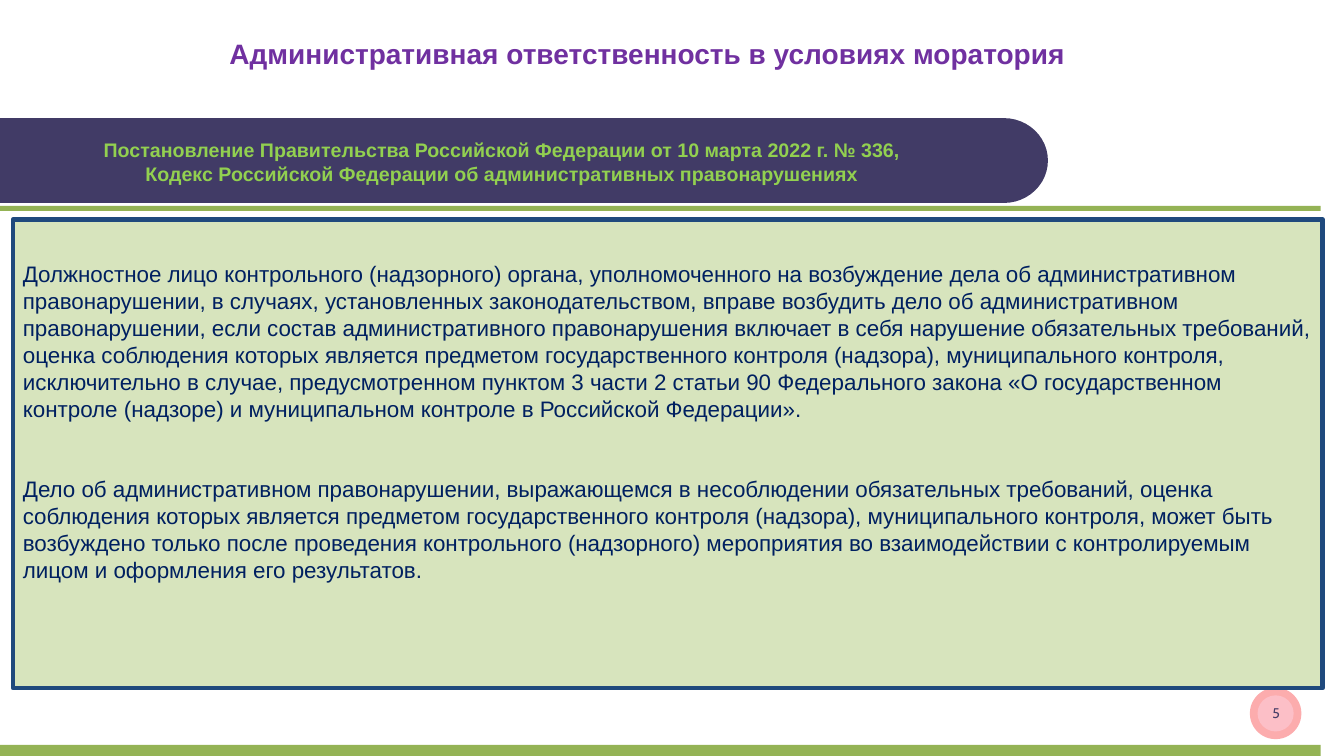
import pptx
import pptx.util
import pptx.dml.color
import pptx.enum.shapes
import pptx.enum.text

Pt = pptx.util.Pt
SHAPES = pptx.enum.shapes.MSO_SHAPE
ANCHOR = pptx.enum.text.MSO_ANCHOR
ALIGN = pptx.enum.text.PP_ALIGN

# Content
TITLE = ["Административная ответственность в условиях моратория"]
LEGAL_BASIS = [
    "Постановление Правительства Российской Федерации от 10 марта 2022 г. № 336,",
    "Кодекс Российской Федерации об административных правонарушениях",
]
BODY = [
    "Должностное лицо контрольного (надзорного) органа, уполномоченного на возбуждение дела "
    "об административном правонарушении, в случаях, установленных законодательством, вправе "
    "возбудить дело об административном правонарушении, если состав административного "
    "правонарушения включает в себя нарушение обязательных требований, оценка соблюдения "
    "которых является предметом государственного контроля (надзора), муниципального контроля, "
    "исключительно в случае, предусмотренном пунктом 3 части 2 статьи 90 Федерального закона "
    "«О государственном контроле (надзоре) и муниципальном контроле в Российской Федерации».",
    "Дело об административном правонарушении, выражающемся в несоблюдении обязательных "
    "требований, оценка соблюдения которых является предметом государственного контроля "
    "(надзора), муниципального контроля, может быть возбуждено только после проведения "
    "контрольного (надзорного) мероприятия во взаимодействии с контролируемым лицом и "
    "оформления его результатов.",
]
PAGE_NUMBER = ["5"]

COLORS = {
    "title": "7030A0", "banner": "413B66", "banner text": "92D050",
    "stripe": "94B355", "panel": "D7E4BD", "panel line": "1F497D",
    "body": "002060", "outer dot": "FCACAD", "inner dot": "FCBFC7",
    "number": "493F68",
}
SLIDE_WIDTH, SLIDE_HEIGHT = 960, 540
BANNER_TOP, BANNER_HEIGHT, BANNER_WIDTH, CAP_WIDTH = 84.4, 60.6, 717, 63
STRIPE_WIDTH = 943.4
DOT_CENTER = (911.2, 509.6)

presentation = pptx.Presentation()
presentation.slide_width = Pt(SLIDE_WIDTH)
presentation.slide_height = Pt(SLIDE_HEIGHT)
slide = presentation.slides.add_slide(presentation.slide_layouts[6])


def color(name):
    return pptx.dml.color.RGBColor.from_string(COLORS[name])


def add_block(kind, left, top, width, height, fill, line=None):
    shape = slide.shapes.add_shape(kind, Pt(left), Pt(top), Pt(width), Pt(height))
    shape.shadow.inherit = False
    shape.fill.solid()
    shape.fill.fore_color.rgb = color(fill)
    if line:
        shape.line.color.rgb = color(line)
        shape.line.width = Pt(3.35)
    else:
        shape.line.fill.background()
    return shape


def write(shape, lines, size, ink, font="Arial", bold=False, align=ALIGN.CENTER,
          anchor=ANCHOR.TOP, spacing=None, gap=0, top_inset=3.6):
    frame = shape.text_frame
    frame.word_wrap = True
    frame.vertical_anchor = anchor
    frame.margin_left = frame.margin_right = Pt(7.2)
    frame.margin_top, frame.margin_bottom = Pt(top_inset), Pt(3.6)
    for index, line in enumerate(lines):
        paragraph = frame.paragraphs[0] if index == 0 else frame.add_paragraph()
        paragraph.text = line
        paragraph.alignment = align
        if spacing:
            paragraph.line_spacing = Pt(spacing)
        if index and gap:
            paragraph.space_before = Pt(gap)
        paragraph.font.name = font
        paragraph.font.size = Pt(size)
        paragraph.font.bold = bold
        paragraph.font.color.rgb = color(ink)


def add_text(left, top, width, height, lines, **text_format):
    box = slide.shapes.add_textbox(Pt(left), Pt(top), Pt(width), Pt(height))
    write(box, lines, **text_format)


# Page number on two concentric dots
for diameter, fill in ((36.8, "outer dot"), (25.8, "inner dot")):
    left, top = (center - diameter / 2 for center in DOT_CENTER)
    add_block(SHAPES.OVAL, left, top, diameter, diameter, fill)
add_text(869, 499.7, 85, 19.4, PAGE_NUMBER, size=10, ink="number", font="Cabin")

# Banner with a rounded right end
add_block(SHAPES.RECTANGLE, 0, BANNER_TOP, BANNER_WIDTH, BANNER_HEIGHT, "banner")
add_block(SHAPES.OVAL, BANNER_WIDTH - CAP_WIDTH / 2, BANNER_TOP,
          CAP_WIDTH, BANNER_HEIGHT, "banner")

# Title
add_text(121, 24.5, 682.6, 29.5, TITLE, size=20, ink="title", bold=True, spacing=22)

# Green stripes
for top, height in ((147, 3.6), (532, 8)):
    add_block(SHAPES.RECTANGLE, 0, top, STRIPE_WIDTH, height, "stripe")

# Main panel
panel = add_block(SHAPES.RECTANGLE, 9.3, 157, 935.5, 334.5, "panel", line="panel line")
write(panel, BODY, size=16, ink="body", align=ALIGN.LEFT, spacing=19.25, gap=38,
      top_inset=28.6)

# Banner text
add_text(15.1, 82.8, 686.9, 65.5, LEGAL_BASIS, size=14, ink="banner text", bold=True,
         anchor=ANCHOR.MIDDLE)

presentation.save("out.pptx")
